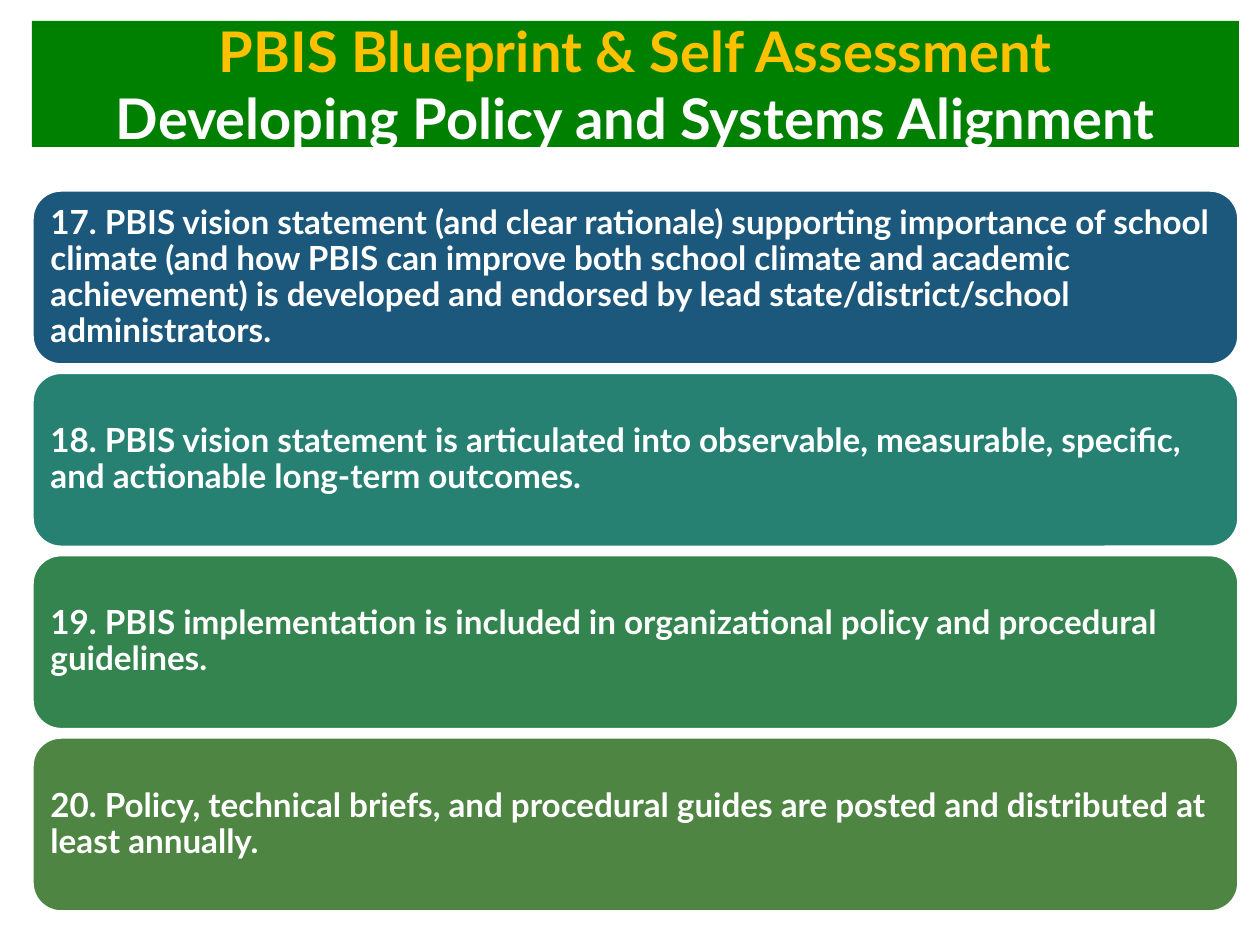
from pptx import Presentation
from pptx.dml.color import RGBColor
from pptx.enum.shapes import MSO_SHAPE
from pptx.enum.text import MSO_ANCHOR, PP_ALIGN
from pptx.util import Pt

RECTANGLE = MSO_SHAPE.RECTANGLE
ROUNDED = MSO_SHAPE.ROUNDED_RECTANGLE
MIDDLE = MSO_ANCHOR.MIDDLE
LEFT, CENTER = PP_ALIGN.LEFT, PP_ALIGN.CENTER

FONT = "Lato"
WHITE = RGBColor(0xFF, 0xFF, 0xFF)
GOLD = RGBColor(0xFF, 0xC0, 0x00)
GREEN = RGBColor(0x00, 0x80, 0x00)
BLUE = RGBColor(0x1B, 0x58, 0x7C)
TEAL = RGBColor(0x26, 0x81, 0x73)
EMERALD = RGBColor(0x33, 0x84, 0x4E)
OLIVE = RGBColor(0x4E, 0x85, 0x42)

# Content
TITLE = [
    ("PBIS Blueprint & Self Assessment", GOLD),
    ("Developing Policy and Systems Alignment", WHITE),
]
CARDS = [
    ("17. PBIS vision statement (and clear rationale) supporting importance of "
     "school climate (and how PBIS can improve both school climate and academic "
     "achievement) is developed and endorsed by lead state/district/school "
     "administrators.", BLUE),
    ("18. PBIS vision statement is articulated into observable, measurable, "
     "specific, and actionable long-term outcomes.", TEAL),
    ("19. PBIS implementation is included in organizational policy and "
     "procedural guidelines.", EMERALD),
    ("20. Policy, technical briefs, and procedural guides are posted and "
     "distributed at least annually.", OLIVE),
]

# Layout in px
PAGE_W, PAGE_H = 1260, 945
MARGIN, WIDTH = 32, 1207
TITLE_TOP, TITLE_H = 21, 126
CARDS_TOP, CARDS_BOTTOM, CARD_H = 190, 912, 175
CARD_INSET = 10
PITCH = (CARDS_BOTTOM - CARDS_TOP - CARD_H) / (len(CARDS) - 1)


def px(value):
    return round(value * 914400 / 126)


def add_panel(page, kind, top, height, fill, inset):
    box = page.shapes.add_shape(kind, px(MARGIN), px(top), px(WIDTH), px(height))
    box.shadow.inherit = False
    box.fill.solid()
    box.fill.fore_color.rgb = fill
    box.line.fill.background()
    frame = box.text_frame
    frame.word_wrap = True
    frame.vertical_anchor = MIDDLE
    frame.margin_left = frame.margin_right = px(CARD_INSET)
    frame.margin_top = frame.margin_bottom = px(inset)
    return box


def write(para, text, *, size, color, align=LEFT, spacing=None):
    para.alignment = align
    para.line_spacing = spacing
    span = para.add_run()
    span.text = text
    span.font.name = FONT
    span.font.size = Pt(size)
    span.font.bold = True
    span.font.color.rgb = color


deck = Presentation()
deck.slide_width, deck.slide_height = px(PAGE_W), px(PAGE_H)
page = deck.slides.add_slide(deck.slide_layouts[6])

# Title banner
banner = add_panel(page, RECTANGLE, TITLE_TOP, TITLE_H, GREEN, 0)
for row, (text, color) in enumerate(TITLE):
    frame = banner.text_frame
    para = frame.add_paragraph() if row else frame.paragraphs[0]
    write(para, text, size=32, color=color, align=CENTER)

# Stacked cards
for row, (text, fill) in enumerate(CARDS):
    card = add_panel(page, ROUNDED, CARDS_TOP + row * PITCH, CARD_H, fill, CARD_INSET)
    card.line.color.rgb = WHITE
    card.line.width = Pt(2)
    write(card.text_frame.paragraphs[0], text, size=19, color=WHITE, spacing=0.9)

deck.save("out.pptx")
